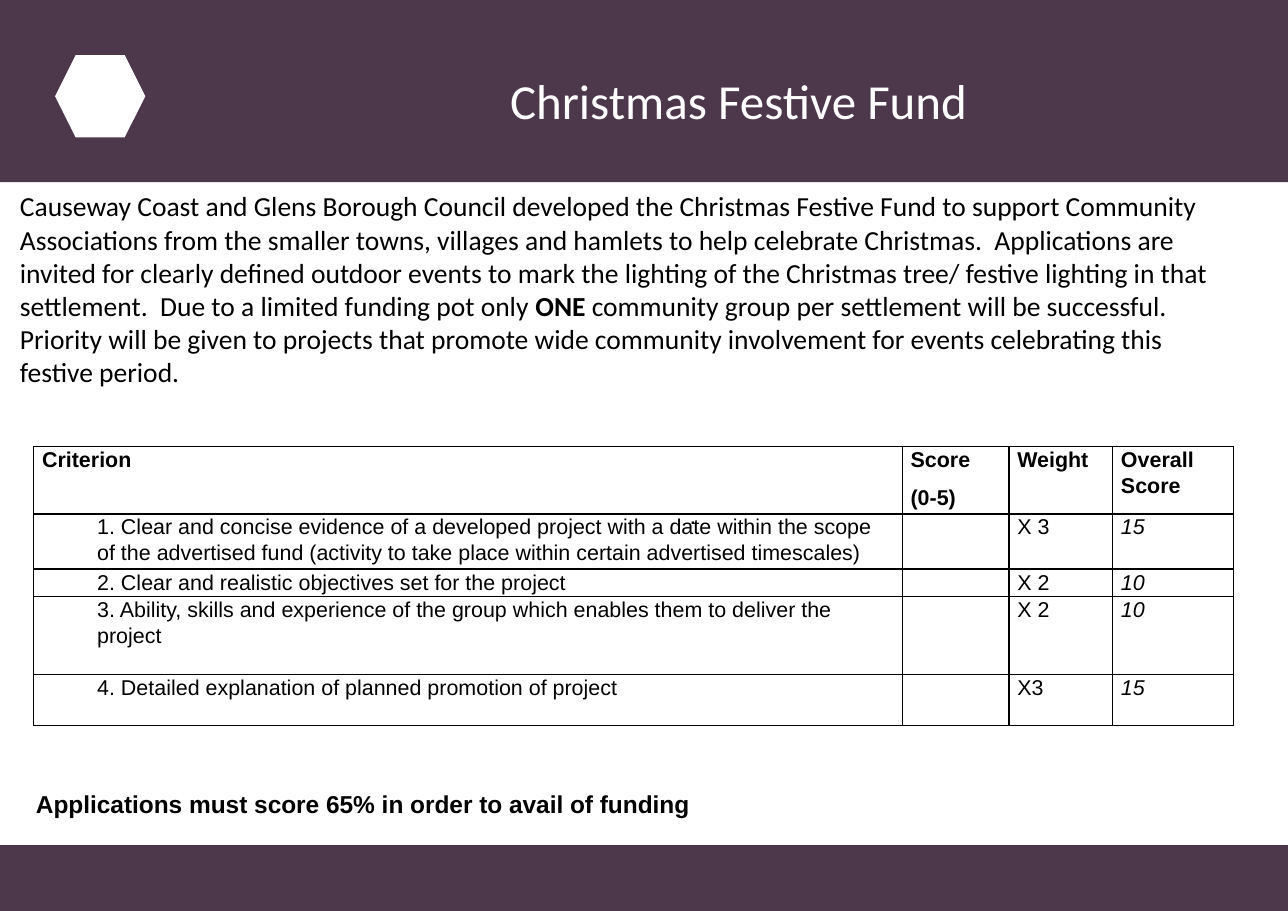
import pptx
import pptx.util
import pptx.dml.color
import pptx.enum.shapes
import pptx.enum.text
import pptx.oxml.ns
from lxml import etree

Cm, Pt = pptx.util.Cm, pptx.util.Pt
RGB = pptx.dml.color.RGBColor
PLUM = RGB(0x4C, 0x37, 0x4B)
WHITE = RGB(0xFF, 0xFF, 0xFF)
BLACK = RGB(0, 0, 0)

# Content
WIDE, HIGH = 29.69, 21.01
TITLE = "Christmas Festive Fund"
INTRO = [
    [("Causeway Coast and Glens Borough Council developed the Christmas Festive Fund "
      "to support Community Associations from the smaller towns, villages and hamlets "
      "to help celebrate Christmas.  Applications are invited for clearly defined "
      "outdoor events to mark the lighting of the Christmas tree/ festive lighting in "
      "that settlement.  Due to a limited funding pot only ", False),
     ("ONE", True),
     (" community group per settlement will be successful.", False)],
    [("Priority will be given to projects that promote wide community involvement "
      "for events celebrating this festive period.", False)],
]
NOTE = "Applications must score 65% in order to avail of funding"
COLS = [20.02, 2.46, 2.39, 2.79]
ROWS = [
    (1.48, ["Criterion", "Score\n(0-5)", "Weight", "Overall Score"]),
    (1.18, ["1. Clear and concise evidence of a developed project with a date within "
            "the scope of the advertised fund (activity to take place within certain "
            "advertised timescales)", "", "X 3", "15"]),
    (0.58, ["2. Clear and realistic objectives set for the project", "", "X 2", "10"]),
    (1.8, ["3. Ability, skills and experience of the group which enables them to "
           "deliver the project", "", "X 2", "10"]),
    (1.18, ["4. Detailed explanation of planned promotion of project", "", "X3", "15"]),
]

deck = pptx.Presentation()
deck.slide_width, deck.slide_height = Cm(WIDE), Cm(HIGH)
slide = deck.slides.add_slide(deck.slide_layouts[6])
SHAPE = pptx.enum.shapes.MSO_SHAPE


def add_block(kind, left, top, width, height, fill):
    block = slide.shapes.add_shape(kind, Cm(left), Cm(top), Cm(width), Cm(height))
    block.shadow.inherit = False
    block.fill.solid()
    block.fill.fore_color.rgb = fill
    block.line.fill.background()


def style(font, name, size, color=BLACK, bold=False, italic=False):
    font.name, font.size = name, Pt(size)
    font.bold, font.italic = bold, italic
    font.color.rgb = color


def add_text(left, top, width, height, paras, name, size, color=BLACK, wrap=True):
    box = slide.shapes.add_textbox(Cm(left), Cm(top), Cm(width), Cm(height))
    frame = box.text_frame
    frame.word_wrap = wrap
    for num, parts in enumerate(paras):
        para = frame.add_paragraph() if num else frame.paragraphs[0]
        for text, bold in parts:
            run = para.add_run()
            run.text = text
            style(run.font, name, size, color, bold)
    return frame


def add_edges(cell):
    props = cell._tc.get_or_add_tcPr()
    for num, side in enumerate(("lnL", "lnR", "lnT", "lnB")):
        line = etree.Element(pptx.oxml.ns.qn("a:" + side), w="12700")
        fill = etree.SubElement(line, pptx.oxml.ns.qn("a:solidFill"))
        etree.SubElement(fill, pptx.oxml.ns.qn("a:srgbClr"), val=str(BLACK))
        props.insert(num, line)


def fill_cell(cell, text, row, col):
    cell.margin_left = cell.margin_right = Cm(0.19)
    cell.margin_top = cell.margin_bottom = 0
    cell.fill.background()
    add_edges(cell)
    cell.text_frame.text = text
    for para in cell.text_frame.paragraphs:
        para.line_spacing = 1.07
        if row and not col:
            para._p.get_or_add_pPr().set("marL", str(Cm(1.27)))
        elif text:
            para.space_after = Pt(8)
        for run in para.runs:
            style(run.font, "Arial", 14, bold=row == 0, italic=row > 0 and col == 3)
        if not text:
            etree.SubElement(para._p, pptx.oxml.ns.qn("a:endParaRPr"), sz="1400")


# Bands and emblem
add_block(SHAPE.RECTANGLE, 0, 0, WIDE, 4.2, PLUM)
add_block(SHAPE.RECTANGLE, 0, 19.49, WIDE, HIGH - 19.49, PLUM)
add_block(SHAPE.HEXAGON, 1.27, 1.27, 2.08, 1.9, WHITE)

# Introduction
intro = add_text(0.46, 4.37, 27.41, 6.15, INTRO, "Calibri", 18)
intro.margin_left = intro.margin_right = intro.margin_top = intro.margin_bottom = 0

# Score table
grid = slide.shapes.add_table(len(ROWS), len(COLS), Cm(0.78), Cm(10.3), Cm(sum(COLS)),
                              Cm(sum(height for height, _ in ROWS))).table
grid.first_row = grid.horz_banding = False
for col, width in enumerate(COLS):
    grid.columns[col].width = Cm(width)
for row, (height, texts) in enumerate(ROWS):
    grid.rows[row].height = Cm(height)
    for col, text in enumerate(texts):
        fill_cell(grid.cell(row, col), text, row, col)

# Stray point, note and title
point = add_text(15.67, 11.58, 0.61, 0.74, [[(".", True)]], "Arial", 11, wrap=False)
point.vertical_anchor = pptx.enum.text.MSO_ANCHOR.MIDDLE
add_text(0.58, 18.08, 21.46, 0.94, [[(NOTE, True)]], "Arial", 16)
add_text(11.51, 1.5, 13.54, 1.63, [[(TITLE, False)]], "Calibri", 32, WHITE)

deck.save("out.pptx")
